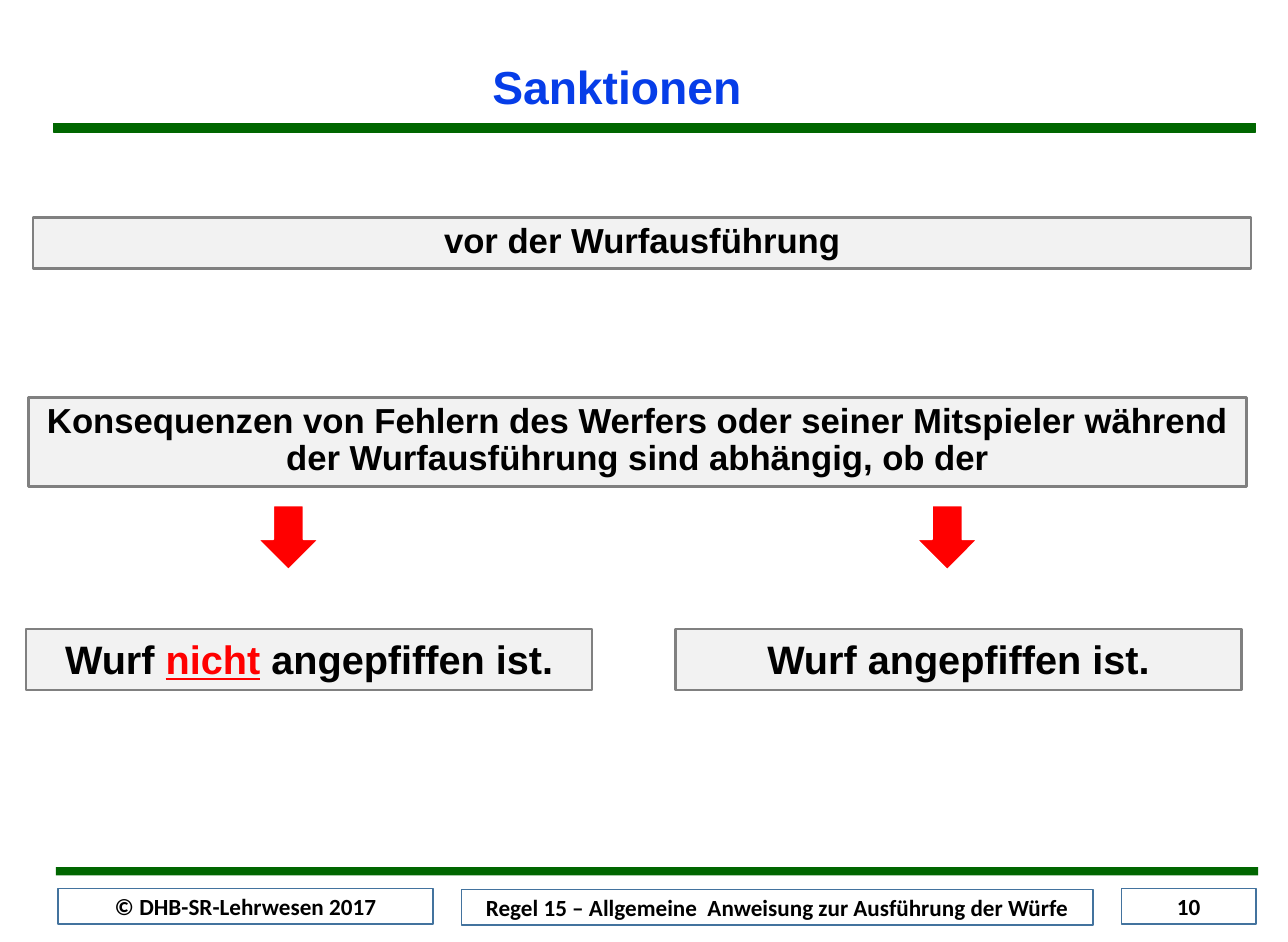
"""Builds the handball rules slide on sanctions before the throw is taken."""
from pptx import Presentation
from pptx import util as u
from pptx.dml.color import RGBColor
from pptx.enum import shapes, text

PX = u.Inches(0.01)
BLACK = RGBColor(0x00, 0x00, 0x00)
WHITE = RGBColor(0xFF, 0xFF, 0xFF)
GREEN = RGBColor(0x00, 0x66, 0x00)
BLUE = RGBColor(0x06, 0x3D, 0xE8)
STEEL = RGBColor(0x43, 0x73, 0x9E)
LIGHT = RGBColor(0xF2, 0xF2, 0xF2)
GREY = RGBColor(0x80, 0x80, 0x80)
RED = RGBColor(0xFF, 0x00, 0x00)


class SanctionsSlide:
    def __init__(self, presentation):
        self.slide = presentation.slides.add_slide(presentation.slide_layouts[5])
        self.heading_font = "Arial"
        self.footer_font = "Calibri"

    def place(self, shape, left, top, width, height):
        shape.left, shape.top = left * PX, top * PX
        shape.width, shape.height = width * PX, height * PX

    def label(self, shape, parts, font, size, color, anchor, margins, spacing=1.0):
        frame = shape.text_frame
        frame.word_wrap = True
        frame.auto_size = text.MSO_AUTO_SIZE.NONE
        frame.vertical_anchor = anchor
        frame.margin_left = frame.margin_right = margins[0] * PX
        frame.margin_top = frame.margin_bottom = margins[1] * PX
        paragraph = frame.paragraphs[0]
        paragraph.alignment = text.PP_ALIGN.CENTER
        paragraph.line_spacing = spacing
        for part in parts:
            run = paragraph.add_run()
            run.text = part
            run.font.name = font
            run.font.size = u.Pt(size)
            run.font.bold = True
            run.font.color.rgb = color
        return paragraph

    def title(self, words, *box):
        shape = self.slide.shapes.title
        self.place(shape, *box)
        self.label(shape, [words], self.heading_font, 28, BLUE,
                   text.MSO_ANCHOR.TOP, (10, 5), 0.9)

    def shape(self, kind, box, fill, line=None, weight=1):
        shape = self.slide.shapes.add_shape(kind, *(length * PX for length in box))
        shape.shadow.inherit = False
        shape.fill.solid()
        shape.fill.fore_color.rgb = fill
        if line is None:
            shape.line.fill.background()
        else:
            shape.line.color.rgb = line
            shape.line.width = u.Pt(weight)
        return shape

    def bar(self, left, top, line=None):
        self.shape(shapes.MSO_SHAPE.RECTANGLE, (left, top, 1011, 7), GREEN, line, 0.75)

    def footer(self, words, *box):
        shape = self.shape(shapes.MSO_SHAPE.RECTANGLE, box, WHITE, STEEL)
        self.label(shape, [words], self.footer_font, 14, BLACK,
                   text.MSO_ANCHOR.MIDDLE, (10, 5))

    def panel(self, parts, box, size, spacing=1.0):
        shape = self.shape(shapes.MSO_SHAPE.RECTANGLE, box, LIGHT, GREY, 1.5)
        paragraph = self.label(shape, parts, self.heading_font, size, BLACK,
                               text.MSO_ANCHOR.TOP, (11, 5), spacing)
        shape.text_frame.auto_size = text.MSO_AUTO_SIZE.SHAPE_TO_FIT_TEXT
        return paragraph

    def arrow(self, left):
        self.shape(shapes.MSO_SHAPE.DOWN_ARROW, (left, 425, 51, 54), RED, WHITE)


def main():
    presentation = Presentation()
    presentation.slide_width = 1083 * PX
    presentation.slide_height = 792 * PX
    sanctions = SanctionsSlide(presentation)

    sanctions.bar(45, 104, GREEN)
    sanctions.bar(47, 729)
    sanctions.footer("© DHB-SR-Lehrwesen 2017", 49, 747, 315, 30)
    sanctions.footer("10", 943, 747, 113, 30)
    sanctions.footer("Regel 15 – Allgemeine  Anweisung zur Ausführung der Würfe",
                     388, 748, 531, 30)

    sanctions.title("Sanktionen ", 187, 49, 674, 53)
    sanctions.panel(["vor der Wurfausführung"], (28, 183, 1024, 43), 21, 0.9)
    sanctions.panel(["Konsequenzen von Fehlern des Werfers oder seiner Mitspieler "
                     "während der Wurfausführung sind abhängig, ob der"],
                    (24, 334, 1024, 75), 21, 0.9)
    not_whistled = sanctions.panel(["Wurf ", "nicht", " angepfiffen ist."],
                                   (22, 529, 476, 51), 24)
    emphasis = not_whistled.runs[1].font
    emphasis.color.rgb = RED
    emphasis.underline = True
    sanctions.panel(["Wurf angepfiffen ist."], (568, 529, 476, 51), 24)
    for left in (217, 771):
        sanctions.arrow(left)

    presentation.save("out.pptx")


if __name__ == "__main__":
    main()
